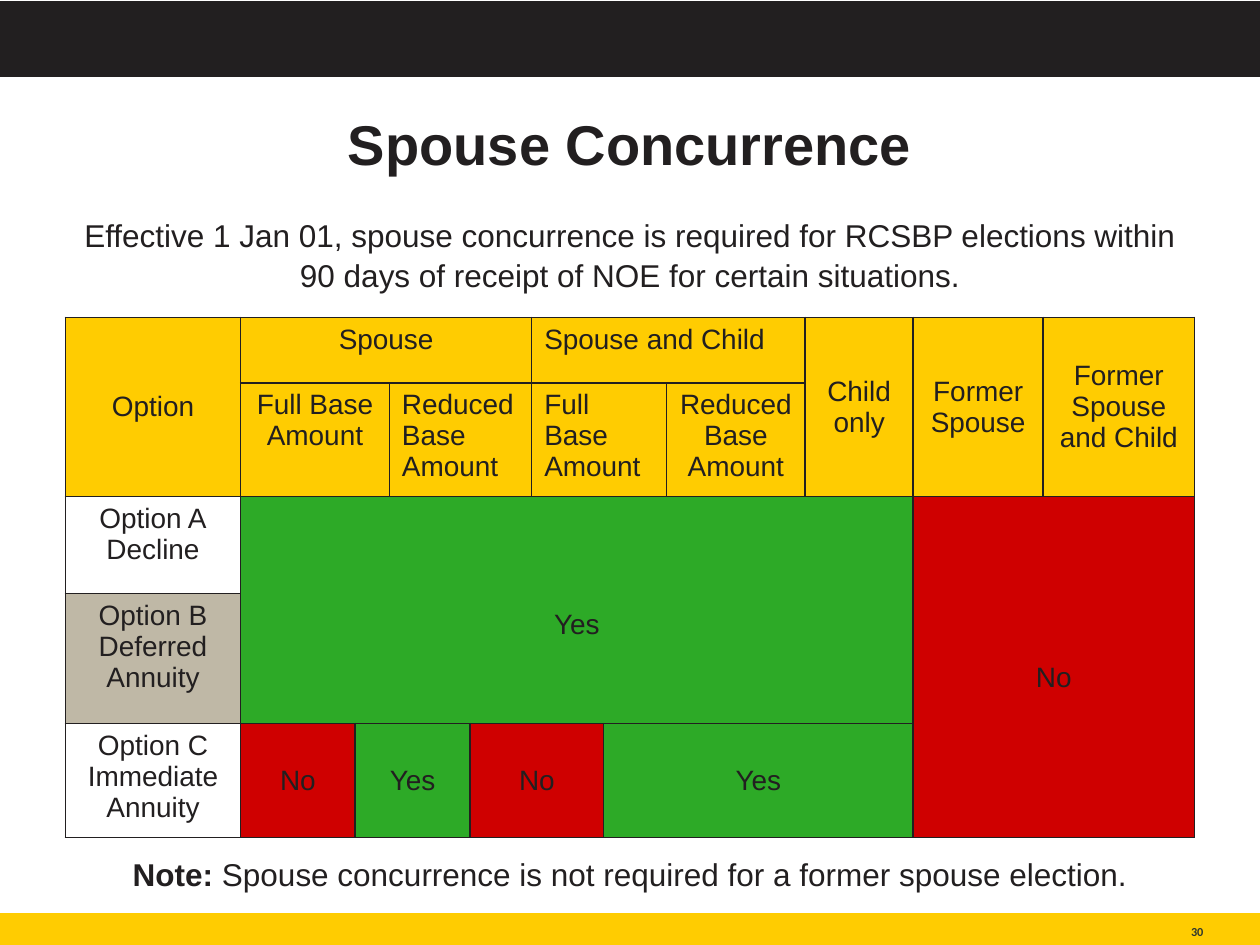
from lxml import etree
from pptx import Presentation
from pptx.dml.color import RGBColor
from pptx.enum.shapes import MSO_SHAPE
from pptx.enum.text import MSO_ANCHOR, PP_ALIGN
from pptx.oxml.ns import qn
from pptx.util import Cm, Pt

RECT = MSO_SHAPE.RECTANGLE
TOP, MID, LOW = MSO_ANCHOR.TOP, MSO_ANCHOR.MIDDLE, MSO_ANCHOR.BOTTOM
LEFT, MID_X, RIGHT = PP_ALIGN.LEFT, PP_ALIGN.CENTER, PP_ALIGN.RIGHT

INK, GOLD, WHITE, TAN = "221F20", "FFCC01", "FFFFFF", "BFB8A6"
GREEN, RED = "2DAA27", "CF0000"

BASE = {"name": "Arial", "size": Pt(18), "bold": False}
CELL = {**BASE, "size": Pt(16)}
HEAD = {**BASE, "size": Pt(32), "bold": True}
PAGE = {"name": "Calibri", "size": Pt(7), "bold": True}

COLS = [3.53, 2.31, 0.69, 1.63, 1.24, 1.45, 1.27, 2.79, 2.18, 2.62, 3.05]
ROWS = [1.32, 2.15, 1.96, 2.62, 2.16]

# row, column, rows spanned, columns spanned, text, fill, anchor, alignment
CELLS = [
    (0, 0, 2, 1, "Option", GOLD, MID, MID_X),
    (0, 1, 1, 4, "Spouse", GOLD, TOP, MID_X),
    (0, 5, 1, 3, "Spouse and Child", GOLD, TOP, LEFT),
    (0, 8, 2, 1, "Child only", GOLD, MID, MID_X),
    (0, 9, 2, 1, "Former Spouse", GOLD, MID, MID_X),
    (0, 10, 2, 1, "Former Spouse and Child", GOLD, MID, MID_X),
    (1, 1, 1, 2, "Full Base Amount", GOLD, TOP, MID_X),
    (1, 3, 1, 2, "Reduced Base Amount", GOLD, TOP, LEFT),
    (1, 5, 1, 2, "Full Base Amount", GOLD, TOP, LEFT),
    (1, 7, 1, 1, "Reduced Base Amount", GOLD, TOP, MID_X),
    (2, 0, 1, 1, "Option A\nDecline", WHITE, TOP, MID_X),
    (2, 1, 2, 8, "Yes", GREEN, MID, MID_X),
    (2, 9, 3, 2, "No", RED, MID, MID_X),
    (3, 0, 1, 1, "Option B\nDeferred Annuity", TAN, TOP, MID_X),
    (4, 0, 1, 1, "Option C\nImmediate\nAnnuity", WHITE, TOP, MID_X),
    (4, 1, 1, 1, "No", RED, MID, MID_X),
    (4, 2, 1, 2, "Yes", GREEN, MID, MID_X),
    (4, 4, 1, 2, "No", RED, MID, MID_X),
    (4, 6, 1, 3, "Yes", GREEN, MID, MID_X),
]
# The two large answers sit a little below the middle of their cells.
DROP = {(2, 1): 0.74, (2, 9): 0.56}


def paint(color, code):
    color.rgb = RGBColor.from_string(code)


def style(font, look, code=INK):
    for key, value in look.items():
        setattr(font, key, value)
    paint(font.color, code)


def place(shape, *box):
    for key, value in zip(("left", "top", "width", "height"), box):
        setattr(shape, key, Cm(value))


def add_bar(slide, top, height, code):
    bar = slide.shapes.add_shape(RECT, 0, Cm(top), Cm(25.4), Cm(height))
    bar.shadow.inherit = False
    bar.fill.solid()
    paint(bar.fill.fore_color, code)
    paint(bar.line.color, code)
    bar.line.width = Pt(1)


def write(para, runs, align, code=INK):
    """Fill a paragraph with (text, look) runs."""
    para.alignment = align
    para.space_before = Pt(0)
    for text, look in runs:
        run = para.add_run()
        run.text = text
        style(run.font, look, code)


def add_text(slide, box, runs):
    shape = slide.shapes.add_textbox(*map(Cm, box))
    shape.text_frame.word_wrap = True
    write(shape.text_frame.paragraphs[0], runs, MID_X)


def add_page(slide, text):
    shape = slide.shapes.add_textbox(*map(Cm, (22.05, 18.42, 2.21, 0.51)))
    frame = shape.text_frame
    frame.word_wrap = False
    frame.vertical_anchor = LOW
    for side in ("left", "top", "right", "bottom"):
        setattr(frame, "margin_" + side, 0)
    write(frame.paragraphs[0], [(text, PAGE)], RIGHT, "2F372F")


def set_title(slide, text):
    title = slide.shapes.title
    place(title, 1.75, 1.57, 21.9, 2.79)
    title.text_frame.vertical_anchor = MID
    para = title.text_frame.paragraphs[0]
    write(para, [(text, HEAD)], MID_X)
    para.line_spacing = 0.9


def set_body(slide, text):
    body = slide.placeholders[1]
    place(body, 1.32, 4.19, 22.76, 1.88)
    para = body.text_frame.paragraphs[0]
    write(para, [(text, BASE)], MID_X)
    para.line_spacing = 1.05
    props = para._p.get_or_add_pPr()
    props.set("marL", "0")
    props.set("indent", "0")
    etree.SubElement(props, qn("a:buNone"))


def edge(cell):
    """Draw a thin dark border on all four sides."""
    props = cell._tc.get_or_add_tcPr()
    for side in "LRTB":
        line = etree.SubElement(props, qn("a:ln" + side), w=str(Pt(1)))
        fill = etree.SubElement(line, qn("a:solidFill"))
        etree.SubElement(fill, qn("a:srgbClr"), val=INK)


def add_grid(slide):
    frame = slide.shapes.add_table(
        len(ROWS), len(COLS), Cm(1.32), Cm(6.4), Cm(sum(COLS)), Cm(sum(ROWS)))
    table = frame.table
    for col, width in zip(table.columns, COLS):
        col.width = Cm(width)
    for row, height in zip(table.rows, ROWS):
        row.height = Cm(height)
    for cell in table.iter_cells():
        edge(cell)
    for row, col, down, wide, text, code, anchor, align in CELLS:
        cell = table.cell(row, col)
        if down * wide > 1:
            cell.merge(table.cell(row + down - 1, col + wide - 1))
        cell.fill.solid()
        paint(cell.fill.fore_color, code)
        cell.vertical_anchor = anchor
        cell.margin_top = Cm(DROP.get((row, col), 0.13))
        parts = cell.text_frame
        for num, line in enumerate(text.split("\n")):
            para = parts.add_paragraph() if num else parts.paragraphs[0]
            write(para, [(line, CELL)], align)


def main():
    deck = Presentation()
    deck.slide_width, deck.slide_height = Cm(25.4), Cm(19.05)
    slide = deck.slides.add_slide(deck.slide_layouts[1])
    add_bar(slide, 0.03, 1.5, INK)
    add_bar(slide, 18.42, 0.69, GOLD)
    add_page(slide, "30")
    set_title(slide, "Spouse Concurrence")
    set_body(slide, "Effective 1 Jan 01, spouse concurrence is required for "
             "RCSBP elections within 90 days of receipt of NOE for certain "
             "situations.")
    add_grid(slide)
    add_text(slide, (1.32, 17.12, 22.76, 1.24), [
        ("Note: ", {**BASE, "bold": True}),
        ("Spouse concurrence is not required for a former spouse election.",
         BASE)])
    deck.save("out.pptx")


if __name__ == "__main__":
    main()
